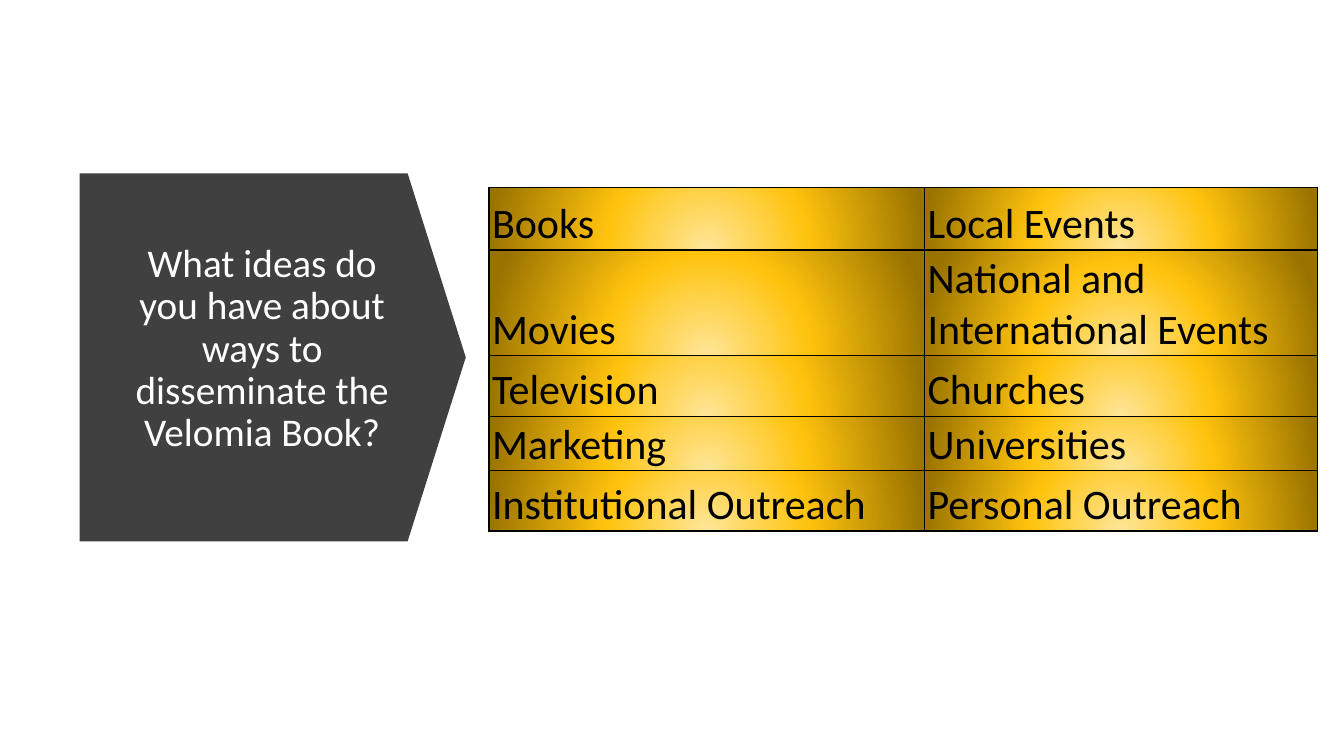
from lxml import etree
from pptx import Presentation
from pptx.dml.color import RGBColor
from pptx.enum.shapes import MSO_SHAPE
from pptx.enum.text import MSO_ANCHOR, MSO_AUTO_SIZE, PP_ALIGN
from pptx.oxml.ns import nsdecls
from pptx.util import Inches, Pt

COLORS = {
    "arrow": "404040",
    "title": "FFFFFF",
    "text": "000000",
    "border": "000000",
    "glow": "FFE699",
    "gold": "FFC30D",
    "bronze": "997300",
}
FONT = "Calibri"
QUESTION = "What ideas do you have about ways to disseminate the Velomia Book?"
IDEAS = [
    ("Books", "Local Events"),
    ("Movies", "National and International Events"),
    ("Television", "Churches"),
    ("Marketing", "Universities"),
    ("Institutional Outreach", "Personal Outreach"),
]
COLUMN_WIDTHS = [4.32, 3.9]
ROW_HEIGHTS = [0.62, 1.05, 0.6, 0.53, 0.6]
GRADIENT_STOPS = [(0, "glow"), (46, "gold"), (100, "bronze")]


def rgb(name):
    return RGBColor.from_string(COLORS[name])


def add_text(paragraph, text, size, color):
    run = paragraph.add_run()
    run.text = text
    run.font.name = FONT
    run.font.size = Pt(size)
    run.font.color.rgb = rgb(color)


def add_question(slide, left, top, width, height):
    """Right-pointing arrow with the title inside the given box."""
    # A down arrow turned by 270 degrees: its own width and height are swapped
    shape = slide.shapes.add_shape(
        MSO_SHAPE.DOWN_ARROW,
        Inches(left + (width - height) / 2), Inches(top + (height - width) / 2),
        Inches(height), Inches(width))
    shape.rotation = 270
    shape.adjustments[0] = 1
    shape.adjustments[1] = 0.158
    shape.shadow.inherit = False
    shape.fill.solid()
    shape.fill.fore_color.rgb = rgb("arrow")
    shape.line.fill.background()

    # Title goes in front of the arrow
    title = slide.shapes.title
    slide.shapes._spTree.append(title._element)
    title.left, title.top = Inches(left + 0.37), Inches(top + 0.35)
    title.width, title.height = Inches(2.88), Inches(2.79)
    frame = title.text_frame
    frame.word_wrap = True
    frame.auto_size = MSO_AUTO_SIZE.NONE
    frame.vertical_anchor = MSO_ANCHOR.MIDDLE
    paragraph = frame.paragraphs[0]
    paragraph.alignment = PP_ALIGN.CENTER
    paragraph.line_spacing = 0.9
    add_text(paragraph, QUESTION, 28, "title")


def paint_cell(cell):
    """Thin border on each side and a golden glow from below."""
    properties = cell._tc.get_or_add_tcPr()
    for side in ("lnL", "lnR", "lnT", "lnB"):
        properties.append(etree.fromstring(
            f'<a:{side} {nsdecls("a")} w="{Pt(1)}"><a:solidFill>'
            f'<a:srgbClr val="{COLORS["border"]}"/></a:solidFill></a:{side}>'))
    stops = "".join(
        f'<a:gs pos="{position * 1000}"><a:srgbClr val="{COLORS[name]}"/></a:gs>'
        for position, name in GRADIENT_STOPS)
    properties.append(etree.fromstring(
        f'<a:gradFill {nsdecls("a")}><a:gsLst>{stops}</a:gsLst><a:path path="circle">'
        '<a:fillToRect l="50000" t="130000" r="50000" b="-30000"/>'
        '</a:path></a:gradFill>'))


def add_ideas(slide, left, top):
    """Table of ideas with its corner at the given point."""
    table = slide.shapes.add_table(
        len(IDEAS), len(COLUMN_WIDTHS), Inches(left), Inches(top),
        Inches(sum(COLUMN_WIDTHS)), Inches(sum(ROW_HEIGHTS))).table
    table.first_row = False
    table.horz_banding = False
    for column, width in zip(table.columns, COLUMN_WIDTHS):
        column.width = Inches(width)
    for row, height, ideas in zip(table.rows, ROW_HEIGHTS, IDEAS):
        row.height = Inches(height)
        for cell, idea in zip(row.cells, ideas):
            cell.margin_left = cell.margin_right = cell.margin_top = Inches(0.03)
            cell.margin_bottom = 0
            cell.vertical_anchor = MSO_ANCHOR.BOTTOM
            add_text(cell.text_frame.paragraphs[0], idea, 30, "text")
            paint_cell(cell)


def main():
    presentation = Presentation()
    presentation.slide_width = Inches(13.33)
    presentation.slide_height = Inches(7.5)
    slide = presentation.slides.add_slide(presentation.slide_layouts[5])
    add_question(slide, 0.79, 1.72, 3.83, 3.65)
    add_ideas(slide, 4.85, 1.86)
    presentation.save("out.pptx")


if __name__ == "__main__":
    main()
